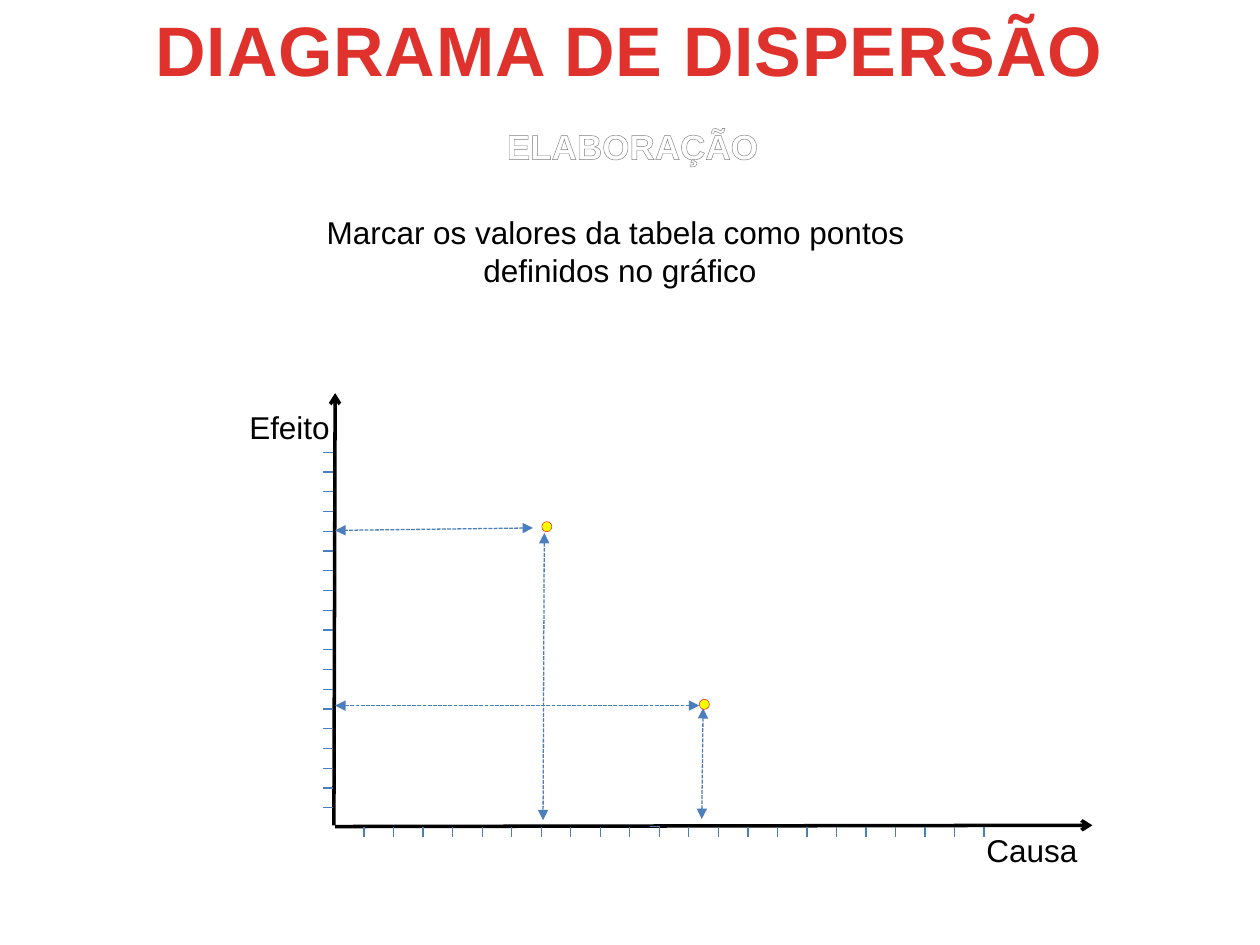
"""Build the scatter diagram slide that marks table values as points."""
from lxml import etree
from pptx import Presentation
from pptx.dml.color import RGBColor
from pptx.enum.dml import MSO_LINE
from pptx.enum.shapes import MSO_CONNECTOR, MSO_SHAPE
from pptx.enum.text import MSO_ANCHOR, MSO_AUTO_SIZE, PP_ALIGN
from pptx.oxml.ns import qn
from pptx.util import Inches, Pt

STRAIGHT = MSO_CONNECTOR.STRAIGHT
OVAL = MSO_SHAPE.OVAL
DASH = MSO_LINE.SQUARE_DOT
TOP = MSO_ANCHOR.TOP
GROW = MSO_AUTO_SIZE.SHAPE_TO_FIT_TEXT
LEFT, CENTER = PP_ALIGN.LEFT, PP_ALIGN.CENTER

RED = RGBColor(0xE0, 0x32, 0x2D)
WHITE = RGBColor(0xFF, 0xFF, 0xFF)
BLACK = RGBColor(0x00, 0x00, 0x00)
BLUE = RGBColor(0x4B, 0x7E, 0xBC)
YELLOW = RGBColor(0xFF, 0xFF, 0x00)
POINT_EDGE = RGBColor(0xFF, 0x00, 0x00)

TITLE_FONT = {"name": "Arial", "size": Pt(40), "bold": True}
SUBTITLE_FONT = {"name": "Arial", "size": Pt(20), "bold": True}
BODY_FONT = {"name": "Arial", "size": Pt(18), "bold": False}

X_TICKS, X_FIRST, X_LAST = 22, 2.89, 7.81
Y_TICKS, Y_FIRST, Y_LAST = 19, 3.59, 6.41
POINT_SIZE = 0.08
POINTS = [(4.3, 4.14), (5.55, 5.55)]
GUIDES = [
    ((4.32, 4.23), (4.31, 6.51)),
    ((4.23, 4.19), (2.66, 4.21)),
    ((5.58, 5.62), (5.57, 6.5)),
    ((5.55, 5.6), (2.66, 5.6)),
]


def write_text(box, lines, font, color, align=CENTER, wrap=True):
    """Fill a box with one formatted paragraph per line."""
    frame = box.text_frame
    frame.word_wrap = wrap
    frame.auto_size = GROW
    frame.vertical_anchor = TOP
    frame.text = "\n".join(lines)
    for para in frame.paragraphs:
        para.alignment = align
        for span in para.runs:
            for name, value in font.items():
                setattr(span.font, name, value)
            span.font.color.rgb = color


def place(shape, left, top, width, height):
    """Move and size a shape, in inches."""
    bounds = {"left": left, "top": top, "width": width, "height": height}
    for name, value in bounds.items():
        setattr(shape, name, Inches(value))


def add_text(slide, bounds, *args, **options):
    """Add a text box and return it."""
    box = slide.shapes.add_textbox(*map(Inches, bounds))
    write_text(box, *args, **options)
    place(box, *bounds)
    return box


def add_title(slide):
    """Place and format the title placeholder."""
    title = slide.shapes.title
    place(title, 1.09, 0, 7.81, 0.78)
    write_text(title, ["DIAGRAMA DE DISPERSÃO"], TITLE_FONT, RED)
    span = title.text_frame.paragraphs[0].runs[0]
    span.font._element.set("spc", "50")


def add_subtitle(slide):
    """Add the white subtitle with outlined letters."""
    box = add_text(slide, (3.91, 0.94, 2.22, 0.44), ["ELABORAÇÃO"],
                   SUBTITLE_FONT, WHITE, wrap=False)
    properties = box.text_frame.paragraphs[0].runs[0].font._element
    outline = etree.Element(qn("a:ln"), w=str(Pt(0.83)))
    fill = etree.SubElement(outline, qn("a:solidFill"))
    etree.SubElement(fill, qn("a:srgbClr"), val="7D7D7D")
    properties.insert(0, outline)


def add_line(slide, start, end, color=BLUE, width=0.75, dash=None,
             head=None, tail=None):
    """Add a straight line with optional dashes and arrowheads."""
    line = slide.shapes.add_connector(STRAIGHT, *map(Inches, start + end))
    line.line.color.rgb = color
    line.line.width = Pt(width)
    if dash:
        line.line.dash_style = dash
    stroke = line.line._get_or_add_ln()
    for tag, kind in (("a:headEnd", head), ("a:tailEnd", tail)):
        if kind:
            etree.SubElement(stroke, qn(tag), type=kind)
    etree.SubElement(line._element.spPr, qn("a:effectLst"))


def add_axes(slide):
    """Draw both axes with their labels and evenly spaced ticks."""
    for start, end in (((2.65, 6.55), (2.66, 3.12)), ((2.66, 6.56), (8.67, 6.55))):
        add_line(slide, start, end, BLACK, 2, tail="arrow")
    for text, bounds in (("Efeito", (1.88, 3.19, 0.85, 0.4)),
                         ("Causa", (7.73, 6.55, 0.93, 0.4))):
        add_text(slide, bounds, [text], BODY_FONT, BLACK, align=LEFT, wrap=False)
    for index in range(X_TICKS):
        x = X_FIRST + index * (X_LAST - X_FIRST) / (X_TICKS - 1)
        add_line(slide, (x, 6.56), (x, 6.64))
    for index in range(Y_TICKS):
        y = Y_FIRST + index * (Y_LAST - Y_FIRST) / (Y_TICKS - 1)
        add_line(slide, (2.64, y), (2.56, y))
    add_line(slide, (5.24, 6.56), (5.16, 6.56))


def add_point(slide, left, top):
    """Add one data point."""
    point = slide.shapes.add_shape(
        OVAL, *map(Inches, (left, top, POINT_SIZE, POINT_SIZE)))
    point.shadow.inherit = False
    point.fill.solid()
    point.fill.fore_color.rgb = YELLOW
    point.line.color.rgb = POINT_EDGE
    point.line.width = Pt(0.25)


def main():
    """Build and save the deck."""
    deck = Presentation()
    deck.slide_width, deck.slide_height = Inches(10), Inches(7.5)
    slide = deck.slides.add_slide(deck.slide_layouts[5])
    add_title(slide)
    add_subtitle(slide)
    add_text(slide, (1.64, 1.64, 6.56, 0.71),
             ["Marcar os valores da tabela como pontos ", "definidos no gráfico"],
             BODY_FONT, BLACK)
    add_axes(slide)
    for start, end in GUIDES:
        add_line(slide, start, end, dash=DASH, head="triangle", tail="triangle")
    for left, top in POINTS:
        add_point(slide, left, top)
    deck.save("out.pptx")


if __name__ == "__main__":
    main()
